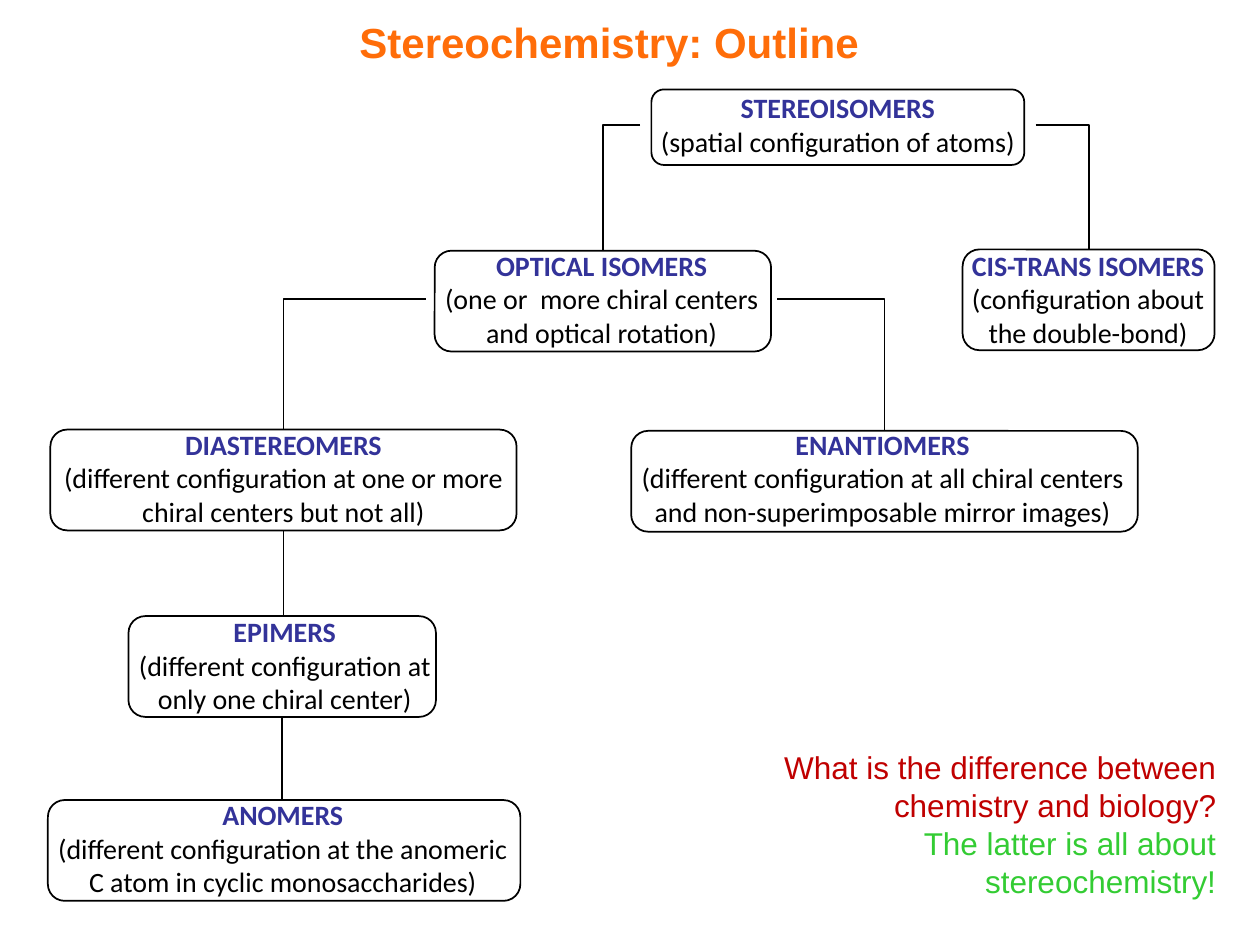
from dataclasses import dataclass

from lxml import etree
from pptx import Presentation
from pptx import util as u
from pptx.dml.color import RGBColor
from pptx.enum import shapes, text
from pptx.oxml.ns import qn

# The slide is a grid of 100 columns by 75 rows.
CELL = u.Inches(0.1)
COLORS = {
    "title": "FF6D09",
    "term": "333399",
    "ink": "000000",
    "question": "C00000",
    "answer": "33CC33",
}


@dataclass(frozen=True)
class Area:
    """A rectangle in grid columns and rows."""
    col: float
    row: float
    cols: float
    rows: float

    @property
    def right(self) -> float:
        return self.col + self.cols

    @property
    def bottom(self) -> float:
        return self.row + self.rows

    @property
    def center(self) -> float:
        return self.col + self.cols / 2

    @property
    def middle(self) -> float:
        return self.row + self.rows / 2

    def emu(self) -> list[int]:
        return [grid(n) for n in (self.col, self.row, self.cols, self.rows)]


@dataclass(frozen=True)
class Line:
    """One paragraph and its look."""
    words: str
    color: str
    size: float
    font: str = "Arial"
    bold: bool = False


@dataclass(frozen=True)
class Isomer:
    term: str
    meaning: str
    caption: Area
    frame: Area


ISOMERS = {
    "stereo": Isomer("STEREOISOMERS", "(spatial configuration of atoms)",
                     Area(50.8, 6.7, 31.4, 6.4), Area(51.7, 7.1, 29.6, 6)),
    "optical": Isomer("OPTICAL ISOMERS",
                      "(one or  more chiral centers and optical rotation)",
                      Area(33.8, 19.2, 27.9, 9.1), Area(34.5, 19.9, 26.7, 8)),
    "cis_trans": Isomer("CIS-TRANS ISOMERS",
                        "(configuration about the double-bond)",
                        Area(74.4, 19.2, 23.9, 9.1), Area(76.4, 19.8, 20, 8)),
    "diastereo": Isomer("DIASTEREOMERS",
                        "(different configuration at one or more chiral centers but not all)",
                        Area(4, 33.4, 37, 9.1), Area(4, 34.1, 37, 8)),
    "enantio": Isomer("ENANTIOMERS",
                      "(different configuration at all chiral centers "
                      "and non-superimposable mirror images)",
                      Area(49.2, 33.4, 41.7, 9.1), Area(50.1, 34.2, 40.2, 8)),
    "epi": Isomer("EPIMERS", "(different configuration at only one chiral center)",
                  Area(9.7, 48.3, 25.8, 9.1), Area(10.2, 48.9, 24.4, 8)),
    "ano": Isomer("ANOMERS",
                  "(different configuration at the anomeric "
                  "C atom in cyclic monosaccharides)",
                  Area(3.3, 62.8, 38.3, 9.1), Area(3.8, 63.5, 37.5, 8)),
}
BRANCHES = [("stereo", "optical"), ("stereo", "cis_trans"),
            ("optical", "enantio"), ("optical", "diastereo")]
DESCENTS = [("diastereo", "epi"), ("epi", "ano")]


def grid(cells: float) -> int:
    return round(cells * CELL)


def rgb(name: str) -> RGBColor:
    return RGBColor.from_string(COLORS[name])


def write(canvas, area: Area, lines: list[Line], align=text.PP_ALIGN.CENTER) -> None:
    frame = canvas.add_textbox(*area.emu()).text_frame
    frame.word_wrap = True
    for number, line in enumerate(lines):
        paragraph = frame.add_paragraph() if number else frame.paragraphs[0]
        paragraph.alignment = align
        run = paragraph.add_run()
        run.text = line.words
        run.font.name = line.font
        run.font.size = u.Pt(line.size)
        run.font.bold = line.bold
        run.font.color.rgb = rgb(line.color)


def outline(shape) -> None:
    shape.line.color.rgb = rgb("ink")
    shape.line.width = u.Pt(1)


def draw_isomer(slide, isomer: Isomer) -> None:
    group = slide.shapes.add_group_shape().shapes
    box = group.add_shape(shapes.MSO_SHAPE.ROUNDED_RECTANGLE, *isomer.frame.emu())
    box.shadow.inherit = False
    box.fill.background()
    outline(box)
    write(group, isomer.caption, [
        Line(isomer.term, "term", 16, "Calibri", True),
        Line(isomer.meaning, "ink", 16, "Calibri"),
    ])


def connect(slide, kind, *ends: float):
    connector = slide.shapes.add_connector(kind, *map(grid, ends))
    outline(connector)
    etree.SubElement(connector._element.spPr, qn("a:effectLst"))
    return connector


def branch(slide, parent: Isomer, child: Isomer) -> None:
    """Leave the parent's side and turn once, down to the child."""
    target = child.frame
    leftward = target.center < parent.frame.center
    start = parent.caption.col if leftward else parent.caption.right
    elbow = connect(slide, shapes.MSO_CONNECTOR.ELBOW,
                    start, parent.caption.middle, target.center, target.row)
    elbow._element.spPr.find(qn("a:prstGeom")).set("prst", "bentConnector2")


def descend(slide, parent: Isomer, child: Isomer) -> None:
    """Drop straight from the parent's bottom to the child's top."""
    column = parent.frame.center
    connect(slide, shapes.MSO_CONNECTOR.STRAIGHT,
            column, parent.frame.bottom, column, child.frame.row)


def main() -> None:
    deck = Presentation()
    deck.slide_width, deck.slide_height = grid(100), grid(75)
    slide = deck.slides.add_slide(deck.slide_layouts[6])

    write(slide.shapes, Area(9.2, 0.8, 78.3, 5.1),
          [Line("Stereochemistry: Outline", "title", 24, bold=True)])
    for isomer in ISOMERS.values():
        draw_isomer(slide, isomer)
    for draw, links in ((branch, BRANCHES), (descend, DESCENTS)):
        for parent, child in links:
            draw(slide, ISOMERS[parent], ISOMERS[child])
    write(slide.shapes, Area(58.3, 58.9, 39.2, 13.1), [
        Line("What is the difference between chemistry and biology?", "question", 18),
        Line("The latter is all about stereochemistry!", "answer", 18),
    ], text.PP_ALIGN.RIGHT)

    deck.save("out.pptx")


if __name__ == "__main__":
    main()
